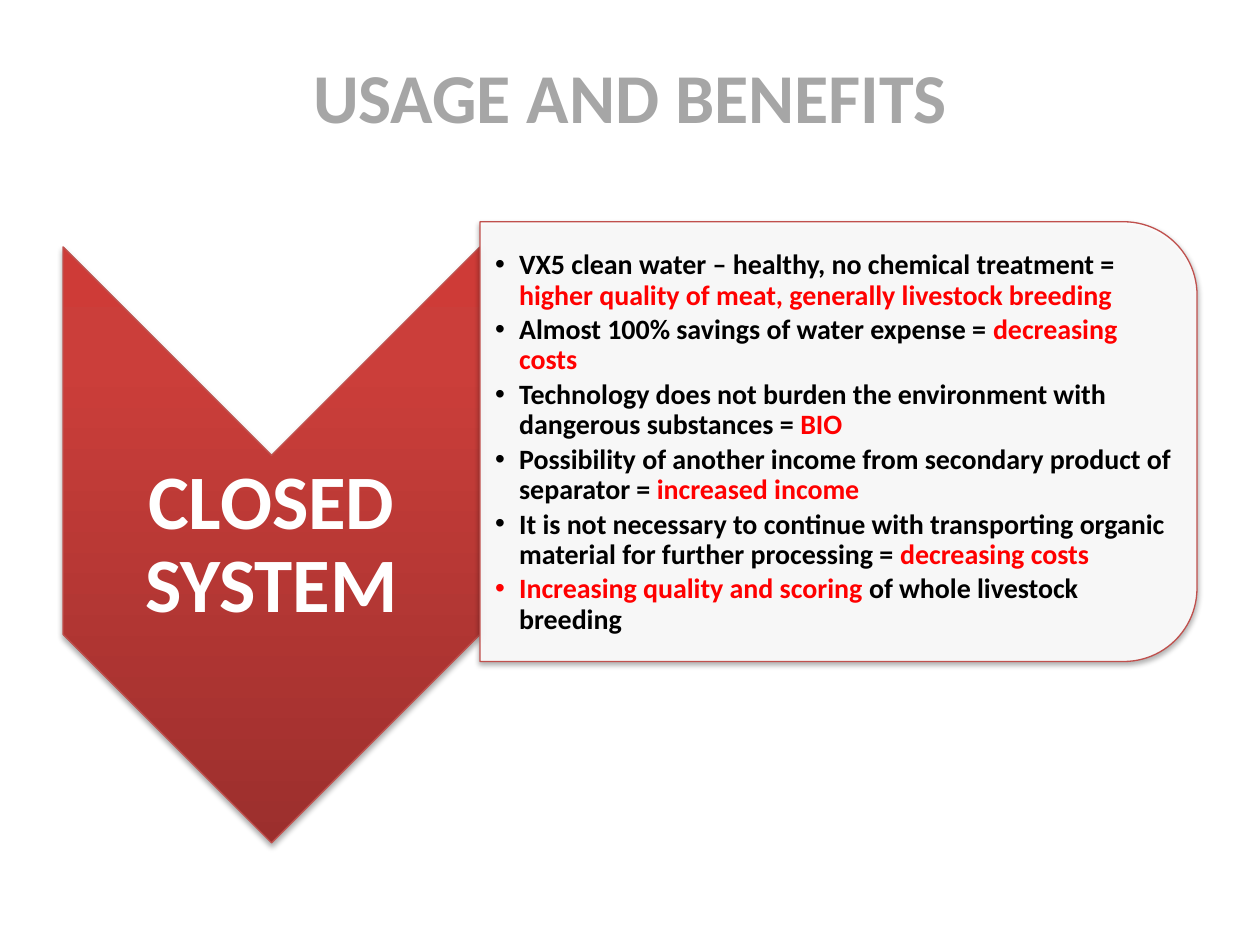
from copy import deepcopy

from pptx import Presentation
from pptx.dml.color import RGBColor
from pptx.enum.shapes import MSO_SHAPE as Shape
from pptx.enum.text import MSO_ANCHOR as Anchor, MSO_AUTO_SIZE as Fit, PP_ALIGN as Align
from pptx.oxml.ns import qn
from pptx.oxml.xmlchemy import OxmlElement as Node
from pptx.util import Inches, Pt

RED, BLACK, WHITE = "FF0000", "000000", "FFFFFF"
EDGE, GREY = "C0504D", "A6A6A6"
STOPS = [(0, "9C2F2D"), (80, "CB3E3A"), (100, "CE3B37")]

# Each bullet is a list of (text, colour) runs
POINTS = [
    [("VX5 clean water – healthy, no chemical treatment = ", BLACK),
     ("higher quality of meat, generally livestock breeding", RED)],
    [("Almost 100% savings of water expense = ", BLACK),
     ("decreasing costs", RED)],
    [("Technology does not burden the environment with dangerous substances = ", BLACK),
     ("BIO", RED)],
    [("Possibility of another income from secondary product of separator = ", BLACK),
     ("increased income", RED)],
    [("It is not necessary to continue with transporting organic material "
      "for further processing = ", BLACK),
     ("decreasing costs", RED)],
    [("Increasing quality and scoring ", RED),
     ("of whole livestock breeding", BLACK)],
]


def color(text):
    return RGBColor.from_string(text)


class Deck:
    font = "Calibri"

    def __init__(self):
        self.prs = Presentation()
        self.prs.slide_width, self.prs.slide_height = Inches(10), Inches(7.5)
        self.slide = self.prs.slides.add_slide(self.prs.slide_layouts[1])

    def place(self, item, box):
        item.left, item.top, item.width, item.height = map(Inches, box)

    def frame(self, item, pads):
        frame = item.text_frame
        frame.word_wrap, frame.auto_size = True, Fit.NONE
        frame.vertical_anchor = Anchor.MIDDLE
        (frame.margin_left, frame.margin_top,
         frame.margin_right, frame.margin_bottom) = map(Inches, pads)
        return frame

    def style(self, para, size, tint=None):
        font = para.font
        font.name, font.size, font.bold = self.font, Pt(size), True
        if tint:
            font.color.rgb = color(tint)

    def title(self, text, box):
        item = self.slide.shapes.title
        self.place(item, box)
        para = self.frame(item, (0.1, 0.05, 0.1, 0.05)).paragraphs[0]
        para.text, para.alignment = text, Align.CENTER
        self.style(para, 40, GREY)

    def shape(self, kind, box):
        """Turned shape that keeps the soft shadow of the theme."""
        item = self.slide.shapes.add_shape(kind, *map(Inches, box))
        item.rotation = 90
        item.line.color.rgb = color(EDGE)
        item.line.width = Pt(0.75)
        return item

    def arrow(self, box):
        fill = self.shape(Shape.CHEVRON, box).fill
        fill.gradient()
        fill.gradient_angle = 180  # turns with the shape, so dark ends up below
        stops = fill._fill._gradFill.find(qn("a:gsLst"))
        stops.append(deepcopy(stops[-1]))
        for stop, (spot, tint) in zip(fill.gradient_stops, STOPS):
            stop.position = spot / 100
            stop.color.rgb = color(tint)

    def card(self, box):
        item = self.shape(Shape.ROUND_2_SAME_RECTANGLE, box)
        item.fill.solid()
        item.fill.fore_color.rgb = color(WHITE)
        alpha = Node("a:alpha")
        alpha.set("val", "90000")
        item._element.spPr.find(qn("a:solidFill"))[0].append(alpha)

    def label(self, text, box):
        item = self.slide.shapes.add_textbox(*map(Inches, box))
        para = self.frame(item, [0.03] * 4).paragraphs[0]
        para.text, para.alignment = text, Align.CENTER
        para.line_spacing = 0.9
        self.style(para, 44, WHITE)

    def bullets(self, points, box):
        item = self.slide.placeholders[1]
        self.place(item, box)
        self.slide.shapes._spTree.append(item._element)  # in front of the card
        frame = self.frame(item, (0.12, 0.01, 0.01, 0.01))
        for n, runs in enumerate(points):
            para = frame.add_paragraph() if n else frame.paragraphs[0]
            para.line_spacing = 0.9
            para.space_before, para.space_after = Pt(0), Pt(2.5)
            self.style(para, 16)
            props = para._p.get_or_add_pPr()
            props.set("marL", str(Inches(0.19)))
            props.set("indent", str(-Inches(0.19)))
            for text, tint in runs:
                run = para.add_run()
                run.text = text
                run.font.color.rgb = color(tint)


def main():
    deck = Deck()
    deck.title("USAGE AND BENEFITS", (0.5, 0.13, 9, 1.25))
    # Arrow with its caption
    deck.arrow((-0.21, 2.67, 4.73, 3.31))
    deck.label("CLOSED SYSTEM", (0.5, 3.62, 3.31, 1.42))
    # Card with the benefits
    deck.card((4.91, 0.66, 3.49, 5.69))
    deck.bullets(POINTS, (3.81, 1.94, 5.52, 3.15))
    deck.prs.save("out.pptx")


if __name__ == "__main__":
    main()
